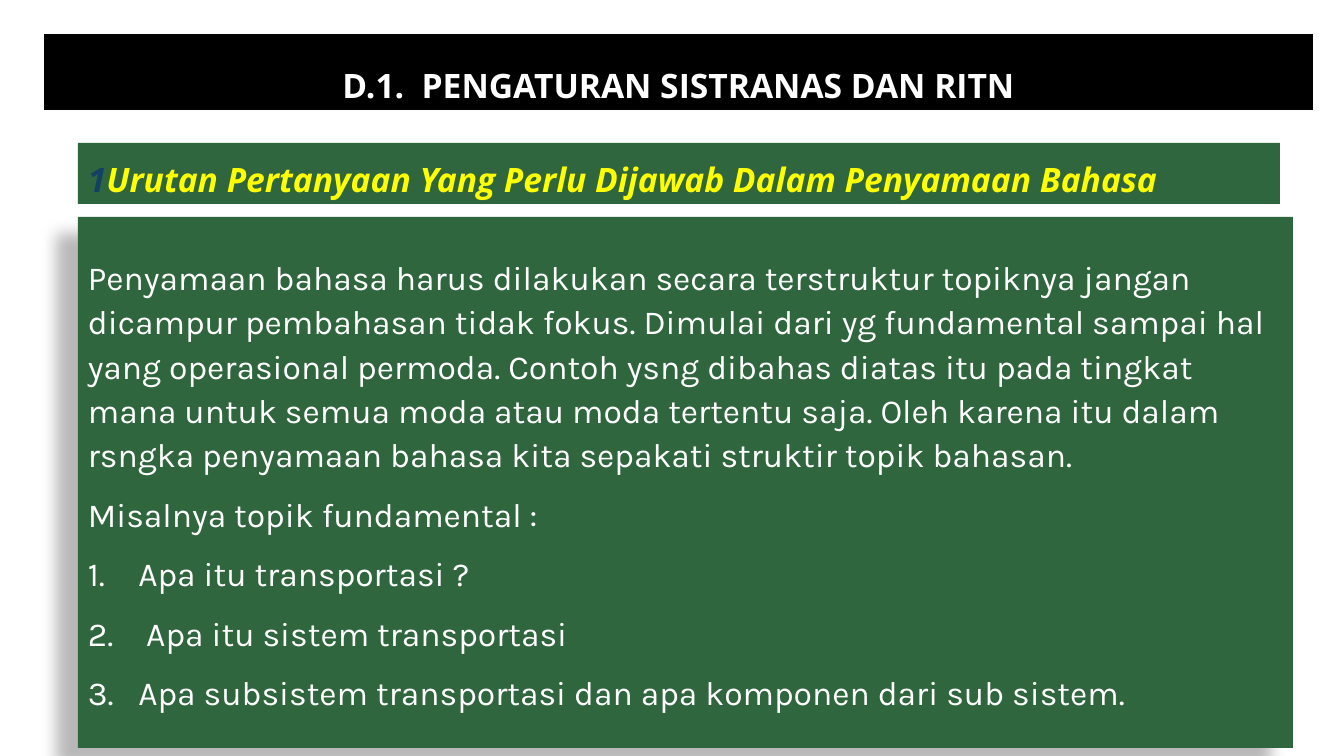
from lxml.etree import SubElement
from pptx import Presentation
from pptx.dml.color import RGBColor as Rgb
from pptx.enum.shapes import MSO_SHAPE as Kind
from pptx.enum.text import MSO_ANCHOR as Anchor, PP_ALIGN as Align
from pptx.oxml.ns import qn
from pptx.util import Emu, Pt

SCALE = 914400 / 100.8
COLORS = {"green": "2F663E", "black": "000000", "white": "FFFFFF",
          "navy": "134163", "yellow": "FFFF00"}
INTRO = [
    "Penyamaan bahasa harus dilakukan secara terstruktur topiknya jangan "
    "dicampur pembahasan tidak fokus. Dimulai dari yg fundamental sampai hal "
    "yang operasional permoda. Contoh ysng dibahas diatas itu pada tingkat "
    "mana untuk semua moda atau moda tertentu saja. Oleh karena itu dalam "
    "rsngka penyamaan bahasa kita sepakati struktir topik bahasan.",
    "Misalnya topik fundamental :",
]
TOPICS = [
    "Apa itu transportasi ?",
    " Apa itu sistem transportasi",
    "Apa subsistem transportasi dan apa komponen dari sub sistem.",
]


def px(size):
    return Emu(round(size * SCALE))


def color(name):
    return Rgb.from_string(COLORS[name])


class Deck:
    def __init__(self, wide, high):
        self.file = Presentation()
        self.file.slide_width, self.file.slide_height = px(wide), px(high)
        self.slide = self.file.slides.add_slide(self.file.slide_layouts[6])
        self.head, self.body, self.size = "Open Sans", "Karla", Pt(24)

    def panel(self, box, fill, anchor):
        shape = self.slide.shapes.add_shape(Kind.RECTANGLE, *map(px, box))
        shape.shadow.inherit = False
        shape.fill.solid()
        shape.fill.fore_color.rgb = color(fill)
        shape.line.fill.background()
        shape.text_frame.word_wrap = True
        shape.text_frame.vertical_anchor = anchor
        return shape

    def title(self, box, fill, runs, align=Align.LEFT, italic=False):
        """Draw a bold heading bar from (text, colour) runs."""
        para = self.panel(box, fill, Anchor.BOTTOM).text_frame.paragraphs[0]
        para.alignment = align
        para.font.name, para.font.size = self.head, self.size
        para.font.bold, para.font.italic = True, italic
        for text, tint in runs:
            run = para.add_run()
            run.text = text
            run.font.color.rgb = color(tint)

    def content(self, box, fill, intro, topics):
        """Draw the shaded panel with plain paragraphs, then a numbered list."""
        shape = self.panel(box, fill, Anchor.MIDDLE)
        self.shade(shape)
        frame = shape.text_frame
        for i, text in enumerate(intro + topics):
            para = frame.add_paragraph() if i else frame.paragraphs[0]
            para.text = text
            para.alignment = Align.LEFT
            para.font.name, para.font.size = self.body, self.size
            para.font.color.rgb = color("white")
            para.line_spacing = 1.1
            para.space_before, para.space_after = Pt(4.8), Pt(6)
            if i >= len(intro):
                self.number(para)

    def number(self, para):
        props = para._p.get_or_add_pPr()
        props.set("marL", "457200")
        props.set("indent", "-457200")
        mark = props.makeelement(qn("a:buAutoNum"), {"type": "arabicPeriod"})
        props.find(qn("a:defRPr")).addprevious(mark)

    def shade(self, shape):
        effects = shape._element.spPr.find(qn("a:effectLst"))
        cast = SubElement(effects, qn("a:outerShdw"), blurRad=str(Pt(11.8)),
                          dist=str(Pt(19.7)), dir=str(141 * 60000), rotWithShape="0")
        tint = SubElement(cast, qn("a:srgbClr"), val=COLORS["black"])
        SubElement(tint, qn("a:alpha"), val="28000")


def main():
    deck = Deck(1344, 756)
    deck.title((78, 143, 1202, 61), "green",
               [("1", "navy"),
                ("Urutan Pertanyaan Yang Perlu Dijawab Dalam Penyamaan Bahasa", "yellow")],
               italic=True)
    deck.content((78, 217, 1215, 531), "green", INTRO, TOPICS)
    deck.title((44, 34, 1269, 76), "black",
               [("D.1.  PENGATURAN SISTRANAS DAN RITN", "white")], Align.CENTER)
    deck.file.save("out.pptx")


if __name__ == "__main__":
    main()
